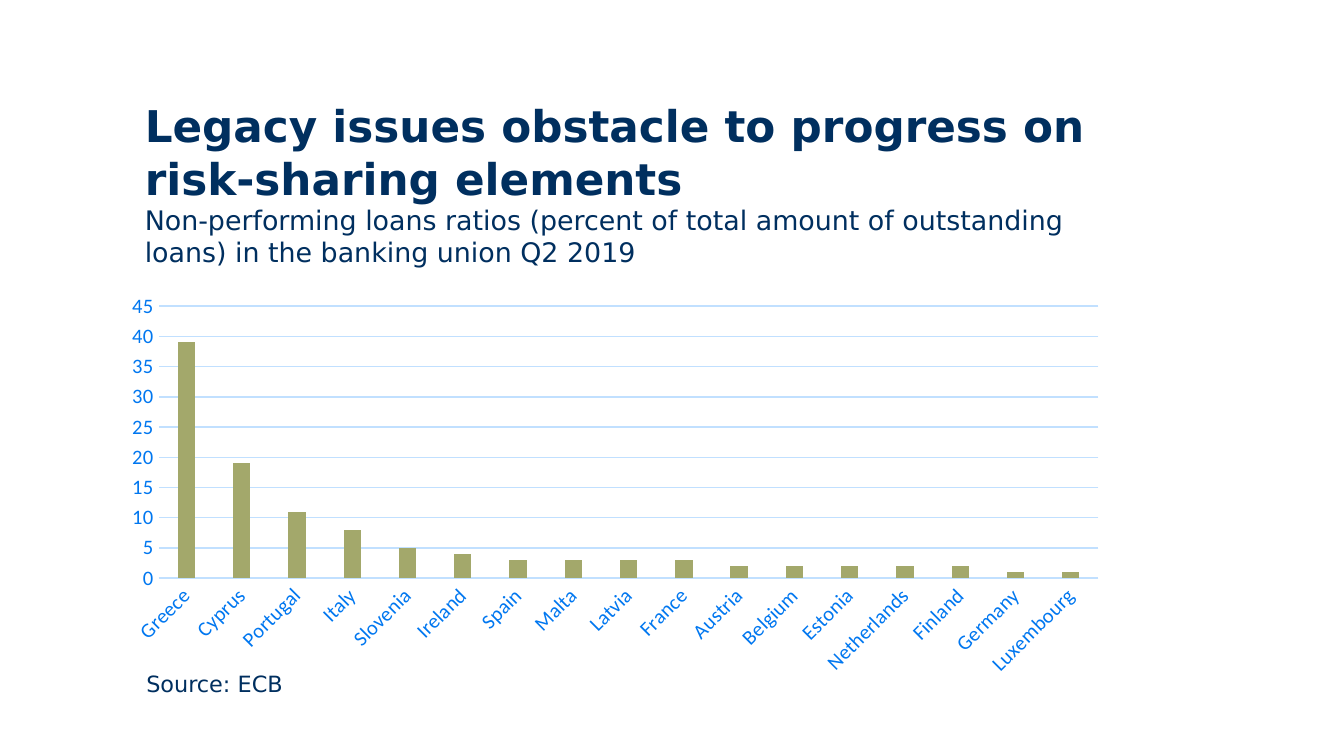
from dataclasses import dataclass

from pptx import Presentation
from pptx.chart.axis import CategoryAxis, ValueAxis
from pptx.chart.data import CategoryChartData
from pptx.dml.color import RGBColor
from pptx.enum.chart import XL_CHART_TYPE, XL_TICK_MARK
from pptx.enum.text import MSO_ANCHOR
from pptx.oxml.ns import qn
from pptx.slide import Slide
from pptx.text.text import Font
from pptx.util import Emu, Pt

COLUMN = XL_CHART_TYPE.COLUMN_CLUSTERED
NO_TICK = XL_TICK_MARK.NONE
TOP, MIDDLE = MSO_ANCHOR.TOP, MSO_ANCHOR.MIDDLE
EMU_PER_PX = 9525
SLIDE_WIDTH, SLIDE_HEIGHT = 960, 540
TEXT_FONT, CHART_FONT = "DejaVu Sans", "Calibri"
COLORS = {"navy": "002F5F", "blue": "0077F0", "grid": "C1E0FF", "olive": "A3A86B"}
LABEL_ROTATION = -45 * 60000


@dataclass(frozen=True)
class Box:
    left: int
    top: int
    width: int
    height: int

    def emu(self) -> list[Emu]:
        return [Emu(n * EMU_PER_PX) for n in (self.left, self.top, self.width, self.height)]


@dataclass(frozen=True)
class Line:
    text: str
    size: float
    bold: bool = False


@dataclass(frozen=True)
class Caption:
    box: Box
    lines: list[Line]
    anchor: MSO_ANCHOR


@dataclass(frozen=True)
class LoanRatio:
    country: str
    percent: int


CAPTIONS = [
    Caption(
        Box(94, 66, 719, 62),
        [
            Line("Legacy issues obstacle to progress on risk-sharing elements", 23.4, True),
            Line(
                "Non-performing loans ratios (percent of total amount of outstanding loans) "
                "in the banking union Q2 2019",
                14.4,
            ),
        ],
        TOP,
    ),
    Caption(Box(95, 477, 461, 23), [Line("Source: ECB", 12)], MIDDLE),
]
RATIO_BOX = Box(80, 204, 719, 285)
RATIOS = [
    LoanRatio("Greece", 39),
    LoanRatio("Cyprus", 19),
    LoanRatio("Portugal", 11),
    LoanRatio("Italy", 8),
    LoanRatio("Slovenia", 5),
    LoanRatio("Ireland", 4),
    LoanRatio("Spain", 3),
    LoanRatio("Malta", 3),
    LoanRatio("Latvia", 3),
    LoanRatio("France", 3),
    LoanRatio("Austria", 2),
    LoanRatio("Belgium", 2),
    LoanRatio("Estonia", 2),
    LoanRatio("Netherlands", 2),
    LoanRatio("Finland", 2),
    LoanRatio("Germany", 1),
    LoanRatio("Luxembourg", 1),
]


def rgb(name: str) -> RGBColor:
    return RGBColor.from_string(COLORS[name])


def style_font(font: Font, face: str, size: float, color: str, bold: bool = False) -> None:
    font.name = face
    font.size = Pt(size)
    font.bold = bold
    font.color.rgb = rgb(color)


def draw_caption(slide: Slide, caption: Caption) -> None:
    frame = slide.shapes.add_textbox(*caption.box.emu()).text_frame
    frame.word_wrap = True
    frame.vertical_anchor = caption.anchor
    paragraph = frame.paragraphs[0]
    paragraph.text = "\v".join(line.text for line in caption.lines)
    for run, line in zip(paragraph.runs, caption.lines):
        style_font(run.font, TEXT_FONT, line.size, "navy", line.bold)


def style_axis(axis: CategoryAxis | ValueAxis) -> None:
    axis.major_tick_mark = NO_TICK
    axis.minor_tick_mark = NO_TICK
    style_font(axis.tick_labels.font, CHART_FONT, 11, "blue")


def draw_ratios(slide: Slide, box: Box, ratios: list[LoanRatio]) -> None:
    data = CategoryChartData(number_format="0")
    data.categories = [ratio.country for ratio in ratios]
    data.add_series("Series 1", [ratio.percent for ratio in ratios])
    chart = slide.shapes.add_chart(COLUMN, *box.emu(), data).chart
    chart.has_legend = False
    chart.has_title = False
    style_font(chart.font, CHART_FONT, 10, "navy")

    columns = chart.plots[0]
    columns.gap_width = 219
    columns.overlap = -27
    columns.vary_by_categories = False
    fill = columns.series[0].format.fill
    fill.solid()
    fill.fore_color.rgb = rgb("olive")

    countries, percents = chart.category_axis, chart.value_axis
    style_axis(countries)
    style_axis(percents)
    label_body = countries._element.find(f"{qn('c:txPr')}/{qn('a:bodyPr')}")
    label_body.set("rot", str(LABEL_ROTATION))
    label_body.set("vert", "horz")
    percents.minimum_scale = 0
    percents.maximum_scale = 45
    percents.major_unit = 5
    percents.tick_labels.number_format = "0"
    percents.tick_labels.number_format_is_linked = False
    percents.format.line.fill.background()
    for line in (countries.format.line, percents.major_gridlines.format.line):
        line.width = Pt(0.75)
        line.color.rgb = rgb("grid")


def main() -> None:
    deck = Presentation()
    deck.slide_width = Emu(SLIDE_WIDTH * EMU_PER_PX)
    deck.slide_height = Emu(SLIDE_HEIGHT * EMU_PER_PX)
    slide = deck.slides.add_slide(deck.slide_layouts[6])
    for caption in CAPTIONS:
        draw_caption(slide, caption)
    draw_ratios(slide, RATIO_BOX, RATIOS)
    deck.save("out.pptx")


if __name__ == "__main__":
    main()
